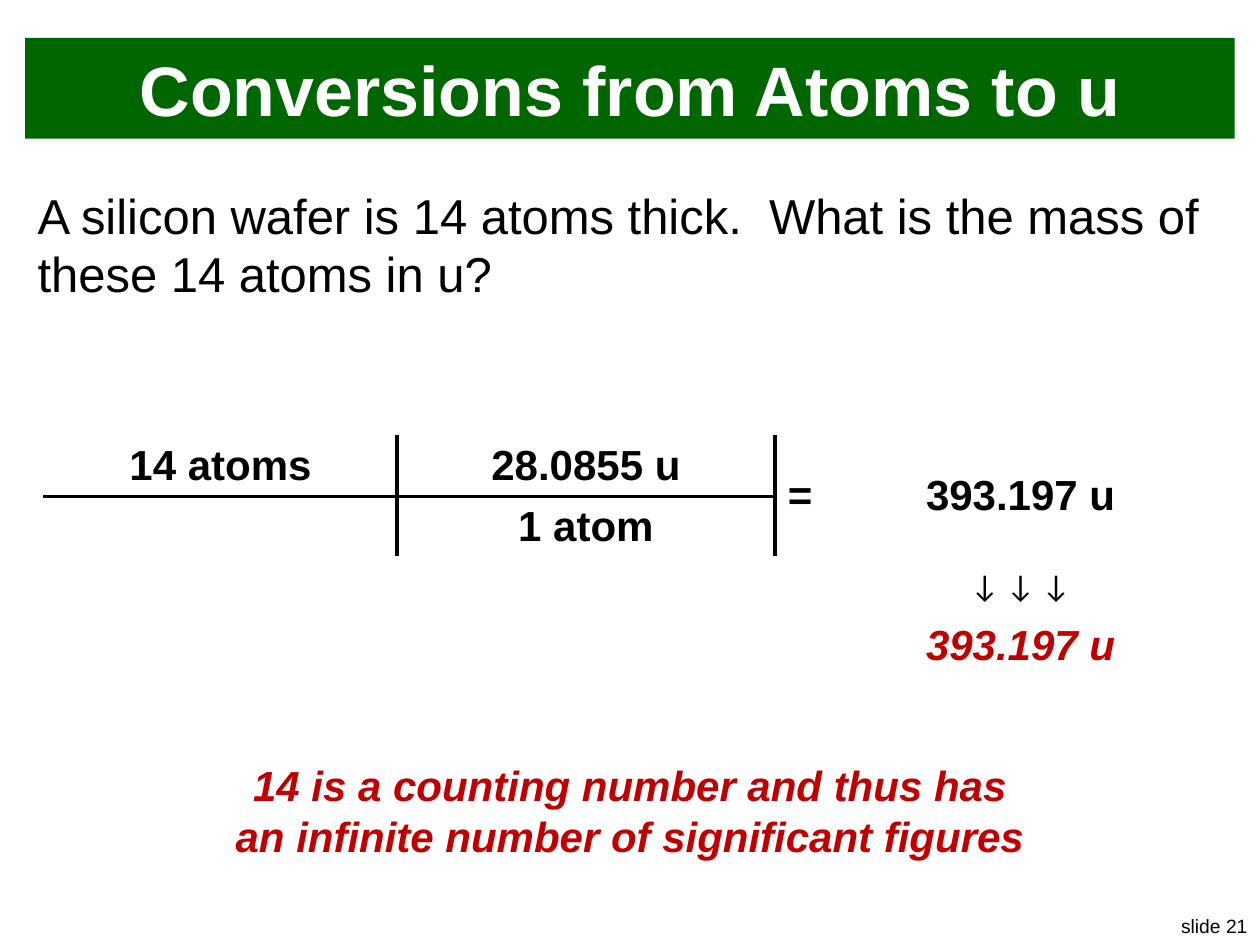
from lxml.etree import SubElement
from pptx import Presentation
from pptx.dml.color import RGBColor
from pptx.enum.shapes import MSO_SHAPE
from pptx.enum.text import MSO_ANCHOR, PP_ALIGN
from pptx.oxml.ns import qn
from pptx.util import Inches, Pt

GREEN = RGBColor(0x00, 0x66, 0x00)
RED = RGBColor(0xC0, 0x00, 0x00)
BLACK = RGBColor(0x00, 0x00, 0x00)
WHITE = RGBColor(0xFF, 0xFF, 0xFF)

COLUMN_WIDTHS = (2.8, 3, 0.4, 3.1)
ROW_HEIGHT = 0.47
ROW_COUNT = 4


def write(frame, text, size, color=BLACK, bold=False, italic=False,
          align=PP_ALIGN.CENTER, font="Arial"):
    """Put one styled run into the first paragraph of a frame."""
    para = frame.paragraphs[0]
    para.alignment = align
    span = para.add_run()
    span.text = text
    span.font.name = font
    span.font.size = Pt(size)
    span.font.bold = bold
    span.font.italic = italic
    span.font.color.rgb = color
    return para


def add_text(page, area, text, size, wrap=True, **style):
    """Add a text box and return its paragraph."""
    box = page.shapes.add_textbox(*map(Inches, area))
    box.text_frame.word_wrap = wrap
    return write(box.text_frame, text, size, **style)


def add_banner(page, area, text):
    """Add the filled title bar."""
    bar = page.shapes.add_shape(MSO_SHAPE.RECTANGLE, *map(Inches, area))
    bar.shadow.inherit = False
    bar.fill.solid()
    bar.fill.fore_color.rgb = GREEN
    bar.line.fill.background()
    bar.text_frame.vertical_anchor = MSO_ANCHOR.MIDDLE
    write(bar.text_frame, text, 40, WHITE, bold=True)


def set_borders(cell, black_sides):
    """Draw the named sides (of L, R, T, B) in black and the others in white."""
    properties = cell._tc.get_or_add_tcPr()
    for index, side in enumerate("LRTB"):
        is_black = side in black_sides
        line = properties.makeelement(qn(f"a:ln{side}"),
                                      {"w": str(Pt(2.25 if is_black else 1))})
        fill = SubElement(line, qn("a:solidFill"))
        SubElement(fill, qn("a:srgbClr"), val=str(BLACK if is_black else WHITE))
        properties.insert(index, line)


def add_conversion(page, left, top):
    """Add the unit conversion laid out as a ruled table."""
    frame = page.shapes.add_table(ROW_COUNT, len(COLUMN_WIDTHS), Inches(left), Inches(top),
                                  Inches(sum(COLUMN_WIDTHS)), Inches(ROW_HEIGHT * ROW_COUNT))
    table = frame.table
    table.first_row = table.horz_banding = False
    for column, width in zip(table.columns, COLUMN_WIDTHS):
        column.width = Inches(width)
    black_sides = {(0, 0): "RB", (0, 1): "LRB", (0, 2): "L", (1, 0): "TR", (1, 1): "LT"}
    for row in range(ROW_COUNT):
        for column in range(len(COLUMN_WIDTHS)):
            cell = table.cell(row, column)
            cell.fill.background()
            cell.vertical_anchor = MSO_ANCHOR.MIDDLE
            cell.margin_top = cell.margin_bottom = Inches(0.04)
            set_borders(cell, black_sides.get((row, column), ""))
    for column in (2, 3):
        table.cell(0, column).merge(table.cell(1, column))
    terms = {(0, 0): "14 atoms", (0, 1): "28.0855 u", (0, 2): "=",
             (0, 3): "393.197 u", (1, 1): "1 atom"}
    for place, text in terms.items():
        write(table.cell(*place).text_frame, text, 24, bold=True)
    write(table.cell(2, 3).text_frame, "↓ ↓ ↓", 18, font="Calibri")
    write(table.cell(3, 3).text_frame, "393.197 u", 24, RED, bold=True, italic=True)


def main():
    """Build the slide and save the deck."""
    deck = Presentation()
    deck.slide_width, deck.slide_height = Inches(10), Inches(7.5)
    page = deck.slides.add_slide(deck.slide_layouts[6])
    add_text(page, (9.25, 7.21, 0.75, 0.29), "slide 21", 11, wrap=False, align=PP_ALIGN.RIGHT)
    add_banner(page, (0.2, 0.3, 9.6, 0.8), "Conversions from Atoms to u")
    question = add_text(
        page, (0.2, 1.42, 9.6, 1.14),
        "A silicon wafer is 14 atoms thick.  What is the mass of these 14 atoms in u?",
        28, align=PP_ALIGN.LEFT)
    question.space_before = Pt(12)
    add_conversion(page, 0.35, 3.46)
    add_text(page, (1.75, 5.98, 6.5, 0.91),
             "14 is a counting number and thus has an infinite number of significant figures",
             24, color=RED, bold=True, italic=True)
    deck.save("out.pptx")


if __name__ == "__main__":
    main()
